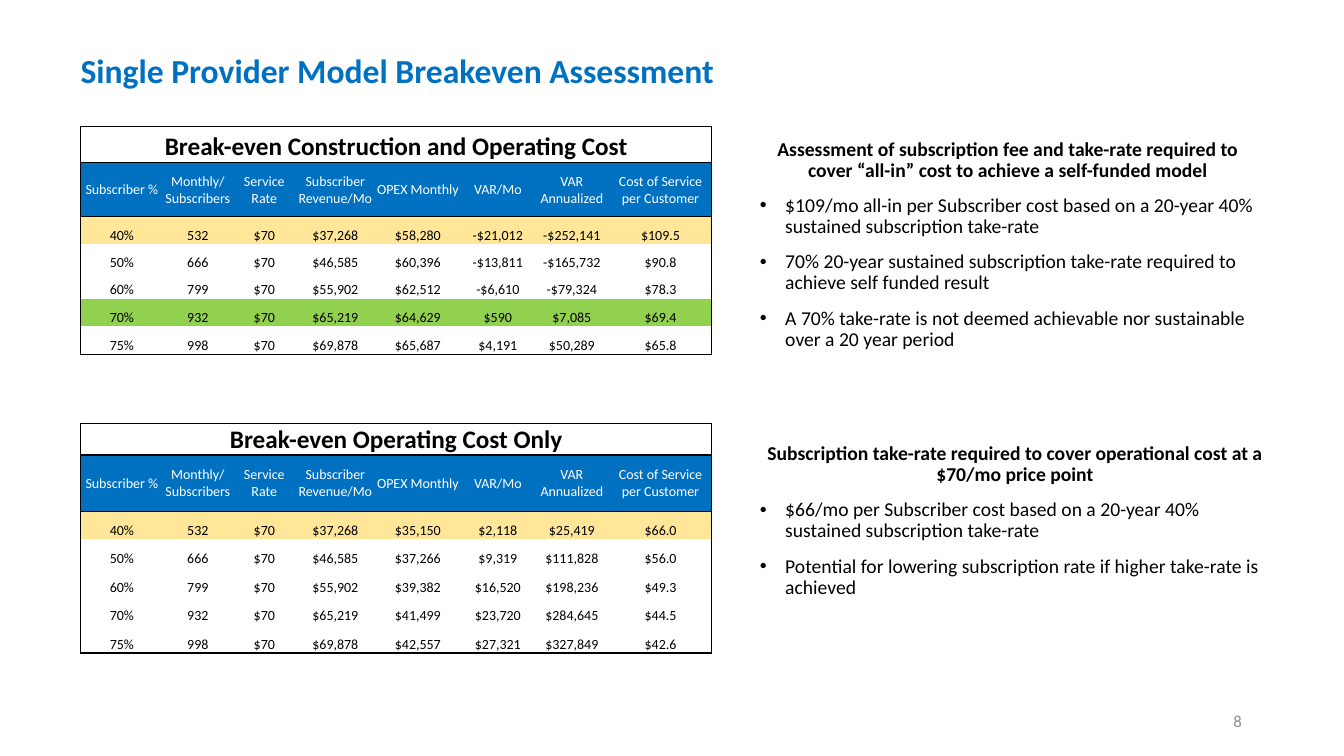
from dataclasses import dataclass

from lxml.etree import SubElement
from pptx import Presentation
from pptx.dml.color import RGBColor
from pptx.enum.text import MSO_ANCHOR, PP_ALIGN
from pptx.oxml.ns import qn
from pptx.slide import Slide
from pptx.table import _Cell
from pptx.text.text import TextFrame, _Paragraph
from pptx.util import Cm, Pt

COLORS = {
    "blue": "0070C0",
    "amber": "FFE699",
    "green": "92D050",
    "white": "FFFFFF",
    "black": "000000",
    "gray": "8C8C8C",
}
FONT = "Calibri"
NO_STYLE_NO_GRID = "{2D5ABB26-0587-4C30-8999-92F81FD0307C}"
TABLE_LEFT = 2.03
NOTES_LEFT = 18.9
COLUMN_WIDTHS = [2.08, 1.75, 1.6, 1.98, 2.18, 1.85, 1.88, 2.59]
HEADINGS = [
    "Subscriber %", "Monthly/ Subscribers", "Service Rate", "Subscriber Revenue/Mo",
    "OPEX Monthly", "VAR/Mo", "VAR Annualized", "Cost of Service per Customer",
]
# Subscriber %, subscribers, service rate and revenue are the same in both tables
SUBSCRIPTIONS = [
    ["40%", "532", "$70", "$37,268"],
    ["50%", "666", "$70", "$46,585"],
    ["60%", "799", "$70", "$55,902"],
    ["70%", "932", "$70", "$65,219"],
    ["75%", "998", "$70", "$69,878"],
]


@dataclass
class CostTable:
    title: str
    top: float
    row_heights: list[float]
    costs: list[list[str]]
    highlights: dict[str, str]


@dataclass
class Notes:
    top: float
    width: float
    heading: str
    bullets: list[str]


COST_TABLES = [
    CostTable(
        "Break-even Operating Cost Only", 10.67, [0.74, 1.42, 0.71, 0.71, 0.71, 0.71, 0.73],
        [
            ["$35,150", "$2,118", "$25,419", "$66.0"],
            ["$37,266", "$9,319", "$111,828", "$56.0"],
            ["$39,382", "$16,520", "$198,236", "$49.3"],
            ["$41,499", "$23,720", "$284,645", "$44.5"],
            ["$42,557", "$27,321", "$327,849", "$42.6"],
        ],
        {"40%": "amber"},
    ),
    CostTable(
        "Break-even Construction and Operating Cost", 3.18,
        [0.91, 1.37, 0.69, 0.69, 0.69, 0.69, 0.71],
        [
            ["$58,280", "-$21,012", "-$252,141", "$109.5"],
            ["$60,396", "-$13,811", "-$165,732", "$90.8"],
            ["$62,512", "-$6,610", "-$79,324", "$78.3"],
            ["$64,629", "$590", "$7,085", "$69.4"],
            ["$65,687", "$4,191", "$50,289", "$65.8"],
        ],
        {"40%": "amber", "70%": "green"},
    ),
]
NOTES = [
    Notes(
        3.38, 13,
        "Assessment of subscription fee and take-rate required to cover “all-in” cost "
        "to achieve a self-funded model",
        [
            "$109/mo all-in per Subscriber cost based on a 20-year 40% sustained "
            "subscription take-rate",
            "70% 20-year sustained subscription take-rate required to achieve self funded result",
            "A 70% take-rate is not deemed achievable nor sustainable over a 20 year period",
        ],
    ),
    Notes(
        11.05, 13.36,
        "Subscription take-rate required to cover operational cost at a $70/mo price point",
        [
            "$66/mo per Subscriber cost based on a 20-year 40% sustained subscription take-rate",
            "Potential for lowering subscription rate if higher take-rate is achieved",
        ],
    ),
]


def write(para: _Paragraph, text: str, size: float, color: str, bold: bool = False,
          align: PP_ALIGN = PP_ALIGN.LEFT) -> None:
    para.text = text
    para.alignment = align
    for span in para.runs:
        span.font.name = FONT
        span.font.size = Pt(size)
        span.font.bold = bold
        span.font.color.rgb = RGBColor.from_string(COLORS[color])


def add_text_frame(page: Slide, left: float, top: float, width: float, height: float,
                   anchor: MSO_ANCHOR = MSO_ANCHOR.TOP) -> TextFrame:
    box = page.shapes.add_textbox(Cm(left), Cm(top), Cm(width), Cm(height))
    frame = box.text_frame
    frame.word_wrap = True
    frame.vertical_anchor = anchor
    return frame


def add_bullet(para: _Paragraph) -> None:
    properties = para._p.get_or_add_pPr()
    properties.set("marL", str(Cm(0.64)))
    properties.set("indent", str(Cm(-0.64)))
    SubElement(properties, qn("a:buFont"), typeface="Arial")
    SubElement(properties, qn("a:buChar"), char="•")


def add_notes(page: Slide, notes: Notes) -> None:
    frame = add_text_frame(page, NOTES_LEFT, notes.top, notes.width, 5.72)
    heading = frame.paragraphs[0]
    write(heading, notes.heading, 14, "black", True, PP_ALIGN.CENTER)
    for bullet in notes.bullets:
        write(frame.add_paragraph(), bullet, 14, "black")
    for para in frame.paragraphs:
        para.line_spacing = 0.9
        para.space_before = Pt(10)
        if para.alignment == PP_ALIGN.LEFT:
            add_bullet(para)


def add_border(cell: _Cell, side: str) -> None:
    """Draw a thin black line on one side: L, R, T or B."""
    line = SubElement(cell._tc.get_or_add_tcPr(), qn(f"a:ln{side}"), w=str(Pt(1)))
    SubElement(SubElement(line, qn("a:solidFill")), qn("a:srgbClr"), val=COLORS["black"])


def add_cost_table(page: Slide, spec_table: CostTable) -> None:
    rows = [[spec_table.title] + [""] * (len(HEADINGS) - 1), HEADINGS]
    rows += [base + cost for base, cost in zip(SUBSCRIPTIONS, spec_table.costs)]
    last_row, last_column = len(rows) - 1, len(HEADINGS) - 1
    frame = page.shapes.add_table(
        len(rows), len(HEADINGS), Cm(TABLE_LEFT), Cm(spec_table.top),
        Cm(sum(COLUMN_WIDTHS)), Cm(sum(spec_table.row_heights)))
    table = frame.table
    table.first_row = table.horz_banding = False
    table._tbl.tblPr.find(qn("a:tableStyleId")).text = NO_STYLE_NO_GRID
    for column, width in zip(table.columns, COLUMN_WIDTHS):
        column.width = Cm(width)
    for row, height in zip(table.rows, spec_table.row_heights):
        row.height = Cm(height)
    table.cell(0, 0).merge(table.cell(0, last_column))

    for i, texts in enumerate(rows):
        fill = "blue" if i == 1 else spec_table.highlights.get(texts[0], "white")
        size, color = (18, "black") if i == 0 else (10, "white" if i == 1 else "black")
        for j, text in enumerate(texts):
            cell = table.cell(i, j)
            cell.margin_left = cell.margin_right = cell.margin_top = Cm(0.03)
            cell.margin_bottom = 0
            cell.vertical_anchor = MSO_ANCHOR.MIDDLE if i == 1 else MSO_ANCHOR.BOTTOM
            edges = {"L": j == 0, "R": j == last_column, "T": i <= 1, "B": i in (0, last_row)}
            if i == 0:
                edges["R"] = j in (0, last_column)
            for side, drawn in edges.items():
                if drawn:
                    add_border(cell, side)
            cell.fill.solid()
            cell.fill.fore_color.rgb = RGBColor.from_string(COLORS[fill])
            write(cell.text_frame.paragraphs[0], text, size, color, i == 0, PP_ALIGN.CENTER)


def main() -> None:
    deck = Presentation()
    deck.slide_width, deck.slide_height = Cm(33.87), Cm(19.05)
    page = deck.slides.add_slide(deck.slide_layouts[6])
    title = add_text_frame(page, 1.78, 1.12, 29.21, 1.4, MSO_ANCHOR.MIDDLE).paragraphs[0]
    write(title, "Single Provider Model Breakeven Assessment", 24, "blue", True)
    title.line_spacing = 0.9
    for cost_table in COST_TABLES:
        add_cost_table(page, cost_table)
    for notes in NOTES:
        add_notes(page, notes)
    number = add_text_frame(page, 23.93, 17.65, 7.62, 1.02, MSO_ANCHOR.MIDDLE)
    write(number.paragraphs[0], "8", 12, "gray", align=PP_ALIGN.RIGHT)
    deck.save("out.pptx")


if __name__ == "__main__":
    main()
